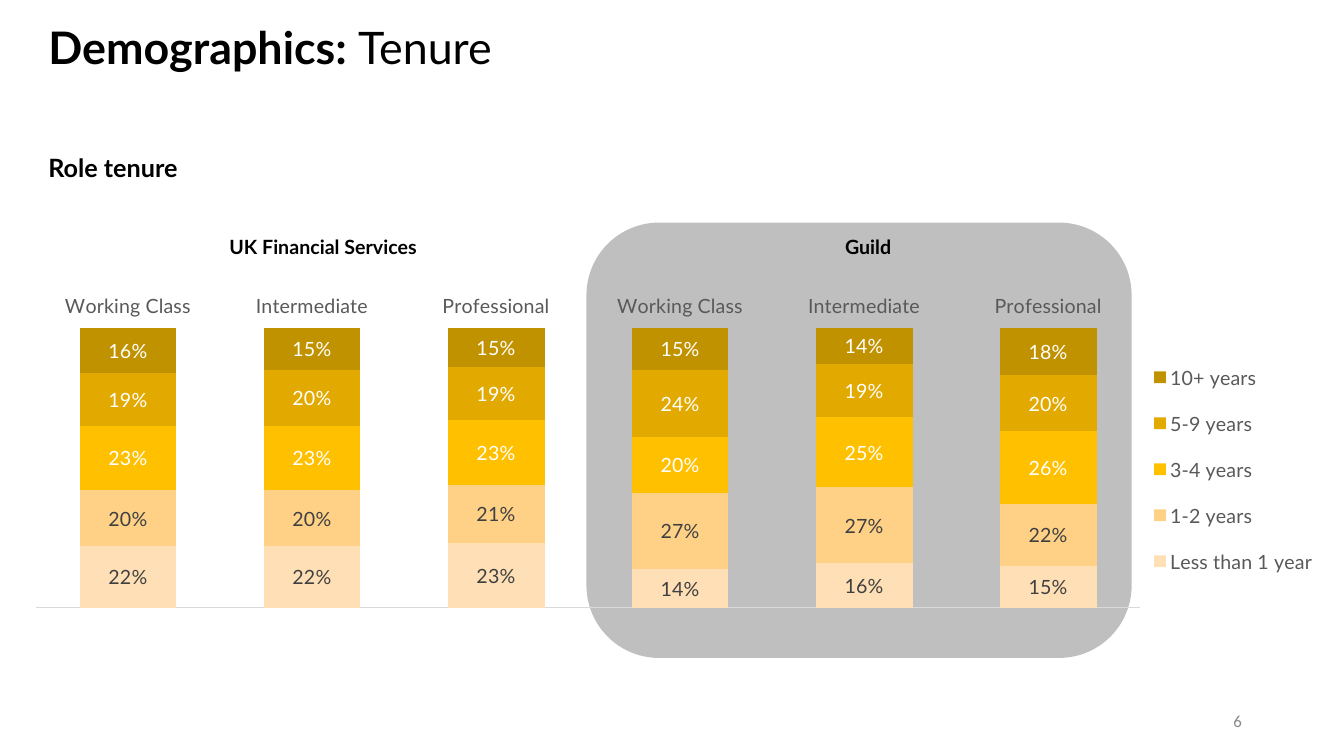
from dataclasses import dataclass

from lxml import etree
from pptx import Presentation
from pptx.chart import data as cd
from pptx.dml import color as col
from pptx.enum import chart as ch, shapes as sh, text as tx
from pptx.util import Cm, Pt

NS = "http://schemas.openxmlformats.org/drawingml/2006/chart"


@dataclass(frozen=True)
class Theme:
    font: str = "Lato"
    page_font: str = "Calibri"
    ink: str = "000000"
    soft: str = "595959"
    dark: str = "404040"
    white: str = "FFFFFF"
    page: str = "888888"
    panel: str = "BFBFBF"
    rule: str = "D9D9D9"
    title: int = 32
    head: int = 18
    body: int = 14
    small: int = 12


T = Theme()

GROUPS = ["Working Class", "Intermediate", "Professional"]
# Name, percentages, fill, label colour; from the bottom of the stack up
BANDS = [
    ("Less than 1 year", (22, 22, 23, 14, 16, 15), "FFE0B6", T.dark),
    ("1-2 years", (20, 20, 21, 27, 27, 22), "FFD187", T.dark),
    ("3-4 years", (23, 23, 23, 20, 25, 26), "FFC000", T.white),
    ("5-9 years", (19, 20, 19, 24, 19, 20), "E2AA00", T.white),
    ("10+ years", (16, 15, 15, 15, 14, 18), "C19200", T.white),
]


def rgb(code):
    return col.RGBColor.from_string(code)


def style(font, size, color, name=T.font, bold=False):
    font.name, font.size, font.bold = name, Pt(size), bold
    font.color.rgb = rgb(color)


def add_text(slide, box, runs, size, color=T.ink, name=T.font,
             align=tx.PP_ALIGN.LEFT, anchor=tx.MSO_ANCHOR.TOP):
    """Add a one-line text box; runs holds (words, bold) pairs."""
    frame = slide.shapes.add_textbox(*map(Cm, box)).text_frame
    frame.word_wrap = True
    frame.vertical_anchor = anchor
    para = frame.paragraphs[0]
    para.alignment = align
    for words, bold in runs:
        run = para.add_run()
        run.text = words
        style(run.font, size, color, name, bold)


def add_panel(slide, box):
    panel = slide.shapes.add_shape(sh.MSO_SHAPE.ROUNDED_RECTANGLE,
                                   *map(Cm, box))
    panel.shadow.inherit = False
    panel.fill.solid()
    panel.fill.fore_color.rgb = rgb(T.panel)
    panel.line.fill.background()


def set_layout(parent, index, box, inner=False):
    """Place a chart part by fractions of the chart's size."""
    for old in parent.findall(f"{{{NS}}}layout"):
        parent.remove(old)
    layout = etree.Element(f"{{{NS}}}layout")
    manual = etree.SubElement(layout, f"{{{NS}}}manualLayout")
    parts = [("layoutTarget", "inner")] if inner else []
    parts += [("xMode", "edge"), ("yMode", "edge"), *zip("xywh", box)]
    for tag, val in parts:
        etree.SubElement(manual, f"{{{NS}}}{tag}", val=str(val))
    parent.insert(index, layout)


def add_stack(slide, box):
    data = cd.CategoryChartData(number_format="0%")
    data.categories = GROUPS * 2
    for name, vals, _, _ in BANDS:
        data.add_series(name, [val / 100 for val in vals])
    chart = slide.shapes.add_chart(ch.XL_CHART_TYPE.COLUMN_STACKED,
                                   *map(Cm, box), data).chart
    chart.has_title = False
    style(chart.font, 10, T.ink)

    # Columns and their labels
    plot = chart.plots[0]
    plot.gap_width, plot.overlap = 90, 100
    plot.vary_by_categories = False
    for series, (_, _, fill, ink) in zip(plot.series, BANDS):
        series.format.fill.solid()
        series.format.fill.fore_color.rgb = rgb(fill)
        labels = series.data_labels
        labels.show_value = True
        labels.position = ch.XL_LABEL_POSITION.CENTER
        labels.number_format = "0%"
        labels.number_format_is_linked = False
        style(labels.font, T.body, ink)

    # Axes: group names sit above the columns
    axis = chart.category_axis
    axis.tick_label_position = ch.XL_TICK_LABEL_POSITION.HIGH
    axis.major_tick_mark = ch.XL_TICK_MARK.NONE
    axis.format.line.color.rgb = rgb(T.rule)
    axis.format.line.width = Pt(0.75)
    style(axis.tick_labels.font, T.body, T.soft)
    scale = chart.value_axis
    scale.minimum_scale, scale.maximum_scale = 0, 1
    scale.has_major_gridlines = False
    scale.visible = False

    # Legend and plot position
    chart.has_legend = True
    legend = chart.legend
    legend.position = ch.XL_LEGEND_POSITION.RIGHT
    legend.include_in_layout = False
    style(legend.font, T.body, T.soft)
    root = chart.element
    set_layout(root.find(f".//{{{NS}}}plotArea"), 0,
               (0.012, 0.142, 0.842, 0.689), inner=True)
    set_layout(root.find(f".//{{{NS}}}legend"), 1, (0.855, 0.18, 0.14, 0.62))


def main():
    deck = Presentation()
    deck.slide_width, deck.slide_height = Cm(33.87), Cm(19.05)
    slide = deck.slides.add_slide(deck.slide_layouts[6])

    # Panel behind the second group
    add_panel(slide, (14.78, 5.61, 13.74, 10.97))

    # Headings
    add_text(slide, (0.97, 0.38, 26.34, 1.63),
             [("Demographics: ", True), ("Tenure", False)], T.title)
    add_text(slide, (0.97, 3.71, 4.29, 1.02), [("Role tenure", True)], T.head)

    # Chart with group titles
    add_stack(slide, (0.51, 6.81, 33.05, 10.24))
    for name, left, width in (("Guild", 17.7, 8.36),
                              ("UK Financial Services", 2.95, 10.39)):
        add_text(slide, (left, 5.79, width, 0.86), [(name, True)], T.body,
                 align=tx.PP_ALIGN.CENTER)

    # Page number
    add_text(slide, (23.93, 17.65, 7.62, 1.02), [("6", False)], T.small,
             T.page, T.page_font, tx.PP_ALIGN.RIGHT, tx.MSO_ANCHOR.MIDDLE)

    deck.save("out.pptx")


if __name__ == "__main__":
    main()
